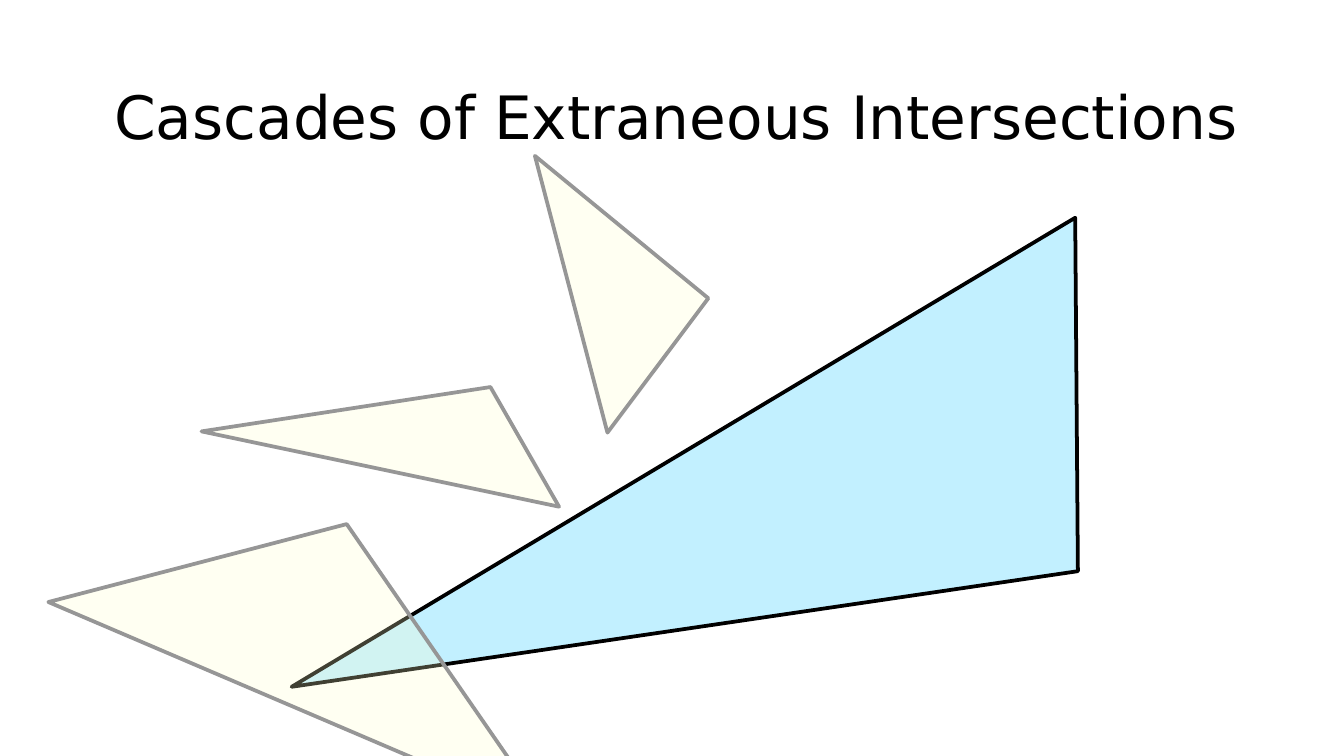
from lxml import etree
from pptx import Presentation
from pptx.dml.color import RGBColor
from pptx.enum.text import MSO_ANCHOR, MSO_AUTO_SIZE, PP_ALIGN
from pptx.oxml.ns import qn
from pptx.util import Inches, Pt

TOP = MSO_ANCHOR.TOP
LEFT = PP_ALIGN.LEFT
NO_FIT = MSO_AUTO_SIZE.NONE
TITLE_ONLY = 5
FONT = "DejaVu Sans"
COLORS = {
    "text": "000000",
    "edge": "000000",
    "sky": "C2F0FF",
    "faded_edge": "969696",
    "cream": "FFFFCC",
}

# Left and top of each faded triangle, and its corners measured from there
FADED_TRIANGLES = [
    ((0.36, 3.9), [(0, 0.58), (3.72, 2.17), (2.22, 0)]),
    ((1.5, 2.88), [(0, 0.33), (2.66, 0.89), (2.15, 0)]),
    ((3.98, 1.16), [(0, 0), (0.54, 2.06), (1.29, 1.06)]),
]


def color(name):
    return RGBColor.from_string(COLORS[name])


def set_text(frame, text, size=32, name="text", align=LEFT):
    frame.word_wrap = True
    frame.auto_size = NO_FIT
    frame.vertical_anchor = TOP
    para = frame.paragraphs[0]
    para.alignment = align
    span = para.add_run()
    span.text = text
    span.font.name = FONT
    span.font.size = Pt(size)
    span.font.color.rgb = color(name)


def add_title(page, box, text):
    title = page.shapes.title
    title.left, title.top, title.width, title.height = map(Inches, box)
    set_text(title.text_frame, text)


def add_triangle(page, origin, corners, fill, edge, opacity=100):
    left, top = origin
    points = [(Inches(left + x), Inches(top + y)) for x, y in corners]
    builder = page.shapes.build_freeform(*points[0])
    builder.add_line_segments(points[1:], close=True)
    triangle = builder.convert_to_shape()
    triangle.shadow.inherit = False
    triangle.fill.solid()
    triangle.fill.fore_color.rgb = color(fill)
    triangle.line.color.rgb = color(edge)
    triangle.line.width = Pt(2)
    if opacity < 100:
        solid = triangle.element.spPr.find(qn("a:solidFill"))
        alpha = etree.SubElement(solid[0], qn("a:alpha"))
        alpha.set("val", str(opacity * 1000))


def add_triangles(page):
    # Large triangle at the back
    add_triangle(page, (2.17, 1.62), [(0, 3.49), (5.83, 0), (5.85, 2.63)],
                 "sky", "edge")
    # Translucent triangles in front
    for origin, corners in FADED_TRIANGLES:
        add_triangle(page, origin, corners, "cream", "faded_edge", opacity=25)


def main():
    deck = Presentation()
    # Widescreen page, 16:9
    deck.slide_width = Inches(10)
    deck.slide_height = Inches(10 * 9 / 16)
    page = deck.slides.add_slide(deck.slide_layouts[TITLE_ONLY])
    add_triangles(page)
    add_title(page, (0.75, 0.54, 8.91, 1.02),
              "Cascades of Extraneous Intersections")
    deck.save("out.pptx")


if __name__ == "__main__":
    main()
